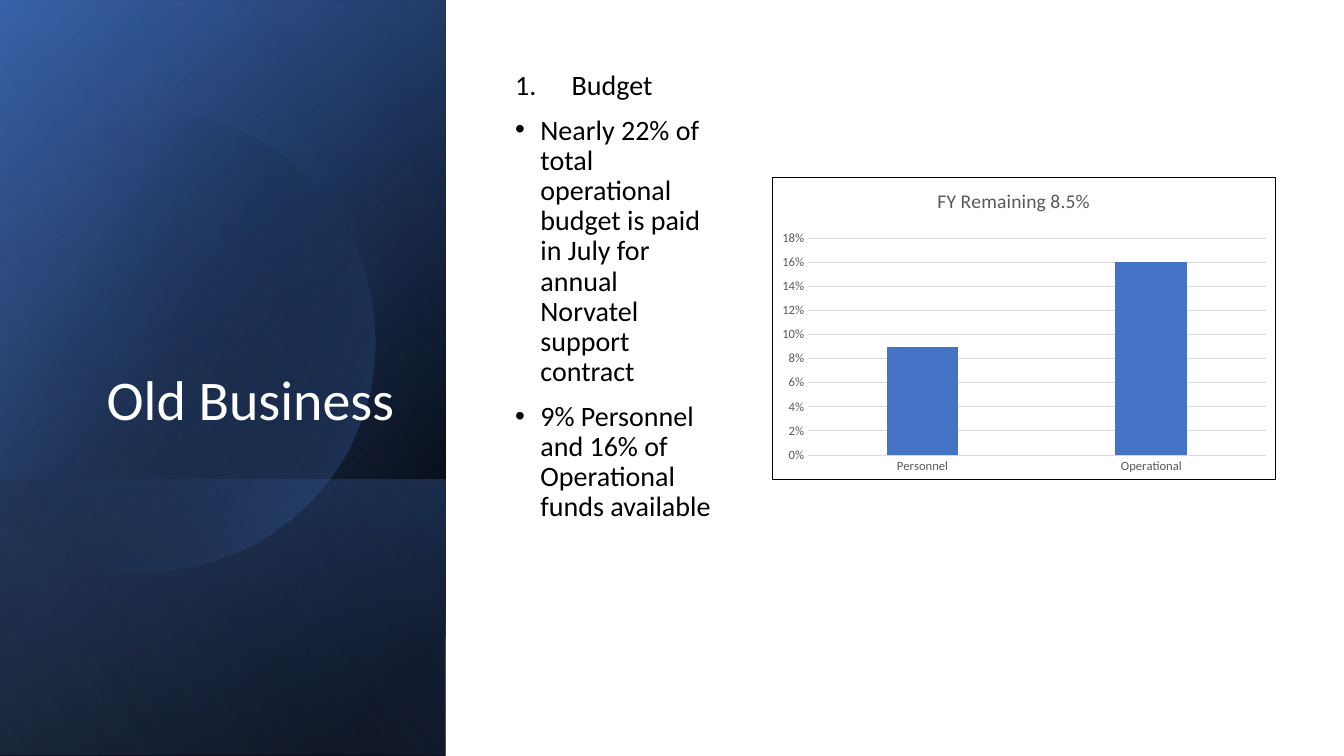
from dataclasses import dataclass

from lxml import etree
from pptx import Presentation
from pptx.chart.data import CategoryChartData
from pptx.dml.color import RGBColor
from pptx.enum.chart import XL_CHART_TYPE, XL_TICK_MARK
from pptx.enum.shapes import MSO_SHAPE
from pptx.enum.text import MSO_ANCHOR, MSO_AUTO_SIZE, PP_ALIGN
from pptx.oxml.ns import qn
from pptx.util import Emu, Pt

PX = 9144
FONT = "Calibri"
BLACK = RGBColor(0x00, 0x00, 0x00)
WHITE = RGBColor(0xFF, 0xFF, 0xFF)
BLUE = RGBColor(0x44, 0x72, 0xC4)
DARK_BLUE = RGBColor(0x2F, 0x55, 0x97)
PALE_BLUE = RGBColor(0x8F, 0xAA, 0xDC)
GREY = RGBColor(0x59, 0x59, 0x59)
GRID_GREY = RGBColor(0xD9, 0xD9, 0xD9)
RECTANGLE = MSO_SHAPE.RECTANGLE
COLUMNS = XL_CHART_TYPE.COLUMN_CLUSTERED
NO_TICK = XL_TICK_MARK.NONE
TOP, BOTTOM = MSO_ANCHOR.TOP, MSO_ANCHOR.BOTTOM
LEFT, RIGHT = PP_ALIGN.LEFT, PP_ALIGN.RIGHT
NO_AUTOFIT = MSO_AUTO_SIZE.NONE


@dataclass(frozen=True)
class Stop:
    position: int
    color: RGBColor
    opacity: int = 100


@dataclass(frozen=True)
class Panel:
    box: tuple[int, int, int, int]
    stops: tuple[Stop, Stop]
    angle: int


@dataclass(frozen=True)
class AgendaLine:
    text: str
    indent: int
    bullet: tuple[str, str, str]
    space_before: int = 10


DOT = ("a:buChar", "char", "•")
NUMBER = ("a:buAutoNum", "type", "arabicPeriod")

BACK_PANELS = (
    Panel((-154, 154, 750, 442), (Stop(8, BLACK), Stop(100, DARK_BLUE)), 50),
    Panel((-154, 155, 750, 442), (Stop(0, BLACK, 0), Stop(99, BLUE, 46)), 30),
    Panel((84, 392, 274, 442), (Stop(2, BLUE, 29), Stop(100, BLACK, 30)), 130),
)
FRONT_PANEL = Panel((-154, 153, 750, 442), (Stop(0, BLACK, 0), Stop(99, PALE_BLUE, 11)), 120)

DISC_STOPS = (Stop(29, BLACK, 0), Stop(100, BLUE, 43))
DISC_ANGLE = 30
DISC_START = (149, 110)
DISC_CURVES = (
    ((246, 112), (335, 177), (363, 275)),
    ((398, 397), (328, 523), (207, 558)),
    ((131, 580), (53, 561), (-3, 514)),
    ((-7, 511), (-11, 507), (-15, 503)),
    ((-15, 394), (-15, 284), (-15, 175)),
    ((-10, 170), (-5, 166), (0, 161)),
    ((23, 142), (50, 128), (80, 119)),
    ((103, 113), (126, 110), (149, 110)),
)
CURVE_STEPS = 16

AGENDA = (
    AgendaLine("Budget", 56, NUMBER, space_before=0),
    AgendaLine("Nearly 22% of total operational budget is paid in July for annual "
               "Norvatel support contract", 25, DOT),
    AgendaLine("9% Personnel and 16% of Operational funds available", 25, DOT),
)


def px(length: int) -> Emu:
    return Emu(length * PX)


def style_font(font, size: float, color: RGBColor) -> None:
    font.name, font.size, font.bold = FONT, Pt(size), False
    font.color.rgb = color


def write(paragraph, text: str, *, size: float, color: RGBColor, align=LEFT,
          line_spacing: float = 0.9, space_before: float = 0) -> None:
    run = paragraph.add_run()
    run.text = text
    style_font(run.font, size, color)
    paragraph.alignment = align
    paragraph.line_spacing = line_spacing
    paragraph.space_before = Pt(space_before)


def place(shape, left: int, top: int, width: int, height: int) -> None:
    shape.left, shape.top, shape.width, shape.height = map(px, (left, top, width, height))


def fill_gradient(shape, stops: tuple[Stop, Stop], angle: int) -> None:
    shape.shadow.inherit = False
    shape.line.fill.background()
    shape.fill.background()
    gradient = etree.Element(qn("a:gradFill"), rotWithShape="1")
    stop_list = etree.SubElement(gradient, qn("a:gsLst"))
    for stop in stops:
        mark = etree.SubElement(stop_list, qn("a:gs"), pos=str(stop.position * 1000))
        color = etree.SubElement(mark, qn("a:srgbClr"), val=str(stop.color))
        if stop.opacity < 100:
            etree.SubElement(color, qn("a:alpha"), val=str(stop.opacity * 1000))
    etree.SubElement(gradient, qn("a:lin"), ang=str(angle * 60000), scaled="0")
    properties = shape._element.spPr
    properties.replace(properties.find(qn("a:noFill")), gradient)


def draw_panel(shapes, panel: Panel) -> None:
    shape = shapes.add_shape(RECTANGLE, *map(px, panel.box))
    shape.rotation = 90
    shape._element.spPr.find(qn("a:xfrm")).set("flipH", "1")
    fill_gradient(shape, panel.stops, panel.angle)


def disc_outline() -> list[tuple[float, float]]:
    points, start = [], DISC_START
    for first, second, end in DISC_CURVES:
        for step in range(1, CURVE_STEPS + 1):
            t = step / CURVE_STEPS
            u = 1 - t
            points.append(tuple(
                u**3 * a + 3 * u * u * t * b + 3 * u * t * t * c + t**3 * d
                for a, b, c, d in zip(start, first, second, end)))
        start = end
    return points


def draw_disc(shapes) -> None:
    builder = shapes.build_freeform(*DISC_START, scale=PX)
    builder.add_line_segments(disc_outline(), close=True)
    fill_gradient(builder.convert_to_shape(), DISC_STOPS, DISC_ANGLE)


def write_title(title) -> None:
    place(title, 51, 64, 350, 370)
    frame = title.text_frame
    frame.auto_size, frame.vertical_anchor = NO_AUTOFIT, BOTTOM
    write(frame.paragraphs[0], "Old Business", size=40, color=WHITE, align=RIGHT)


def write_agenda(body) -> None:
    place(body, 501, 71, 223, 607)
    frame = body.text_frame
    frame.auto_size, frame.vertical_anchor = NO_AUTOFIT, TOP
    frame.margin_top = 0
    for index, line in enumerate(AGENDA):
        paragraph = frame.add_paragraph() if index else frame.paragraphs[0]
        write(paragraph, line.text, size=20, color=BLACK, space_before=line.space_before)
        properties = paragraph._p.get_or_add_pPr()
        properties.set("marL", str(px(line.indent)))
        properties.set("indent", str(px(-line.indent)))
        tag, key, value = line.bullet
        etree.SubElement(properties, qn("a:buFont"), typeface="Arial")
        etree.SubElement(properties, qn(tag), {key: value})


def set_layout(parent, index: int, **values: float | str) -> None:
    for old in parent.findall(qn("c:layout")):
        parent.remove(old)
    layout = etree.Element(qn("c:layout"))
    manual = etree.SubElement(layout, qn("c:manualLayout"))
    for key, value in values.items():
        etree.SubElement(manual, qn(f"c:{key}"), val=str(value))
    parent.insert(index, layout)


def draw_budget_chart(shapes) -> None:
    data = CategoryChartData(number_format="0%")
    data.categories = ("Personnel", "Operational")
    data.add_series("Series 1", (0.09, 0.16))
    chart = shapes.add_chart(COLUMNS, *map(px, (766, 176, 500, 300)), data).chart
    style_font(chart.font, 10, BLACK)
    chart.has_legend = False
    chart.has_title = True
    write(chart.chart_title.text_frame.paragraphs[0], "FY Remaining 8.5%",
          size=14, color=GREY, line_spacing=1.0)
    set_layout(chart.chart_title._element, 1, xMode="edge", yMode="edge", x=0.32, y=0.02)
    plot = chart.plots[0]
    plot.gap_width, plot.overlap, plot.vary_by_categories = 219, -27, False
    fill = plot.series[0].format.fill
    fill.solid()
    fill.fore_color.rgb = BLUE
    amounts, groups = chart.value_axis, chart.category_axis
    for axis in (amounts, groups):
        axis.major_tick_mark = axis.minor_tick_mark = NO_TICK
        style_font(axis.tick_labels.font, 9, GREY)
    amounts.minimum_scale, amounts.maximum_scale, amounts.major_unit = 0, 0.18, 0.02
    amounts.tick_labels.number_format = "0%"
    amounts.tick_labels.number_format_is_linked = False
    amounts.format.line.fill.background()
    for line in (groups.format.line, amounts.major_gridlines.format.line):
        line.color.rgb, line.width = GRID_GREY, Pt(0.75)
    space = chart._chartSpace
    set_layout(space.chart.plotArea, 0, layoutTarget="inner", xMode="edge", yMode="edge",
               x=0.07, y=0.2, w=0.91, h=0.72)
    frame = etree.Element(qn("c:spPr"))
    etree.SubElement(frame, qn("a:noFill"))
    border = etree.SubElement(frame, qn("a:ln"), w=str(Pt(0.75)))
    solid = etree.SubElement(border, qn("a:solidFill"))
    etree.SubElement(solid, qn("a:srgbClr"), val=str(BLACK))
    space.chart.addnext(frame)


def main() -> None:
    deck = Presentation()
    deck.slide_width, deck.slide_height = px(1333), px(750)
    slide = deck.slides.add_slide(deck.slide_layouts[1])
    shapes = slide.shapes
    title, agenda = shapes.title, slide.placeholders[1]
    for panel in BACK_PANELS:
        draw_panel(shapes, panel)
    draw_disc(shapes)
    draw_panel(shapes, FRONT_PANEL)
    for placeholder in (title, agenda):
        shapes._spTree.append(placeholder._element)
    write_title(title)
    write_agenda(agenda)
    draw_budget_chart(shapes)
    deck.save("out.pptx")


if __name__ == "__main__":
    main()
